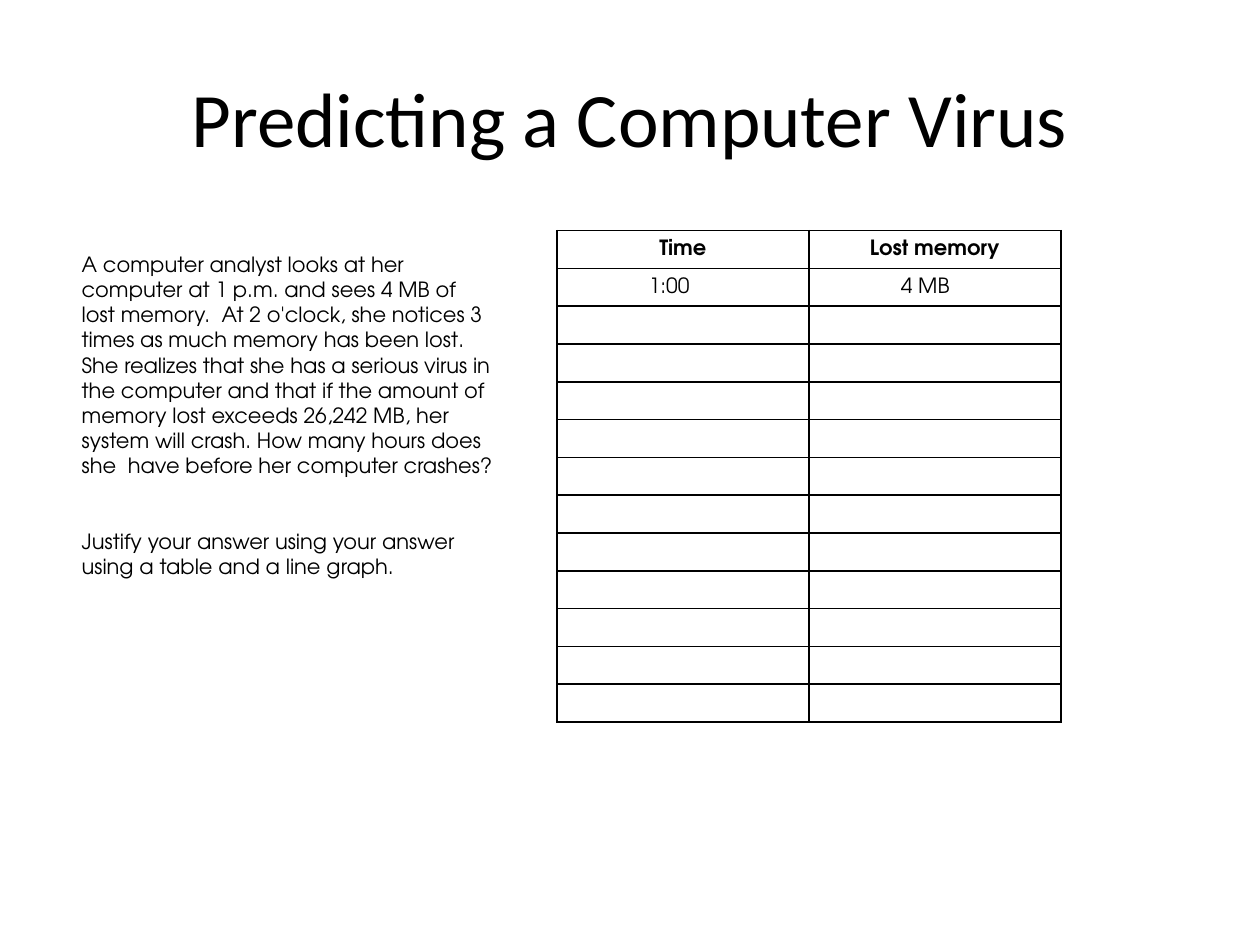
from dataclasses import dataclass

from lxml import etree
from pptx import Presentation
from pptx.dml.color import RGBColor
from pptx.enum.text import MSO_ANCHOR, PP_ALIGN
from pptx.oxml.ns import qn
from pptx.util import Inches, Pt

MIDDLE = MSO_ANCHOR.MIDDLE
LEFT, CENTER = PP_ALIGN.LEFT, PP_ALIGN.CENTER


@dataclass(frozen=True)
class Theme:
    """Fonts, type sizes and colours of the slide."""
    title_font: str = "Calibri"
    body_font: str = "TeX Gyre Adventor"
    title_size: int = 44
    body_size: int = 12
    ink: str = "000000"
    rule: int = 1


THEME = Theme()
TITLE = "Predicting a Computer Virus"
PROBLEM = [
    "A computer analyst looks at her computer at 1 p.m. and sees 4 MB of "
    "lost memory.  At 2 o'clock, she notices 3 times as much memory has been lost.",
    "She realizes that she has a serious virus in the computer and that if the "
    "amount of memory lost exceeds 26,242 MB, her system will crash. How many "
    "hours does she  have before her computer crashes?",
    "Justify your answer using your answer using a table and a line graph.",
]
ROWS = [("Time", "Lost memory"), ("1:00", "4 MB")] + [("", "")] * 11
COL_W, ROW_H, INDENT = 2, 0.3, 0.66
QUESTION_GAP = 28.8


def set_attrs(obj, values):
    """Set each named attribute of obj."""
    for name, value in values.items():
        setattr(obj, name, value)


def write(p, text, font, size, bold=False, align=LEFT):
    """Write one formatted run into a paragraph."""
    p.alignment = align
    r = p.add_run()
    r.text = text
    set_attrs(r.font, {"name": font, "size": Pt(size), "bold": bold})
    r.font.color.rgb = RGBColor.from_string(THEME.ink)


def add_text(slide, box, texts, font, size, align=LEFT, bottom=0.05):
    """Add a wrapped text box and return its paragraphs."""
    tf = slide.shapes.add_textbox(*map(Inches, box)).text_frame
    set_attrs(tf, {"word_wrap": True, "vertical_anchor": MIDDLE,
                   "margin_top": Inches(0.05), "margin_bottom": Inches(bottom)})
    for i, text in enumerate(texts):
        p = tf.add_paragraph() if i else tf.paragraphs[0]
        write(p, text, font, size, align=align)
    return tf.paragraphs


def add_borders(cell):
    """Draw a solid line on each side of a cell."""
    tc_pr = cell._tc.get_or_add_tcPr()
    for i, side in enumerate(("lnL", "lnR", "lnT", "lnB")):
        ln = etree.Element(qn(f"a:{side}"), w=str(Pt(THEME.rule)))
        fill = etree.SubElement(ln, qn("a:solidFill"))
        etree.SubElement(fill, qn("a:srgbClr"), val=THEME.ink)
        tc_pr.insert(i, ln)


def fill_cell(cell, text, header):
    """Format a cell and write its text, if any."""
    set_attrs(cell, {"vertical_anchor": MIDDLE, "margin_top": 0, "margin_bottom": 0,
                     "margin_left": Inches(0.07), "margin_right": Inches(0.07)})
    cell.fill.background()
    add_borders(cell)
    p = cell.text_frame.paragraphs[0]
    if text:
        write(p, text, THEME.body_font, THEME.body_size, header,
              CENTER if header else LEFT)
        if not header:
            p_pr = p._p.get_or_add_pPr()
            p_pr.set("marL", str(Inches(INDENT)))
            p_pr.set("indent", "0")
    else:
        end = etree.SubElement(p._p, qn("a:endParaRPr"))
        end.set("sz", str(THEME.body_size * 100))


def add_memory_table(slide, left, top):
    """Add the ruled table of times and lost memory."""
    cols = len(ROWS[0])
    size = (left, top, COL_W * cols, ROW_H * len(ROWS))
    table = slide.shapes.add_table(len(ROWS), cols, *map(Inches, size)).table
    table.horz_banding = False
    for column in table.columns:
        column.width = Inches(COL_W)
    for i, row in enumerate(ROWS):
        table.rows[i].height = Inches(ROW_H)
        for j, text in enumerate(row):
            fill_cell(table.cell(i, j), text, header=i == 0)


def main():
    """Build and save the slide."""
    prs = Presentation()
    set_attrs(prs, {"slide_width": Inches(10), "slide_height": Inches(7.5)})
    slide = prs.slides.add_slide(prs.slide_layouts[6])
    add_text(slide, (0.5, 0.3, 9, 1.25), [TITLE], THEME.title_font,
             THEME.title_size, CENTER)
    add_memory_table(slide, 4.42, 1.83)
    paragraphs = add_text(slide, (0.55, 1.93, 3.47, 3.03), PROBLEM,
                          THEME.body_font, THEME.body_size, bottom=0.35)
    paragraphs[-1].space_before = Pt(QUESTION_GAP)
    prs.save("out.pptx")


if __name__ == "__main__":
    main()
